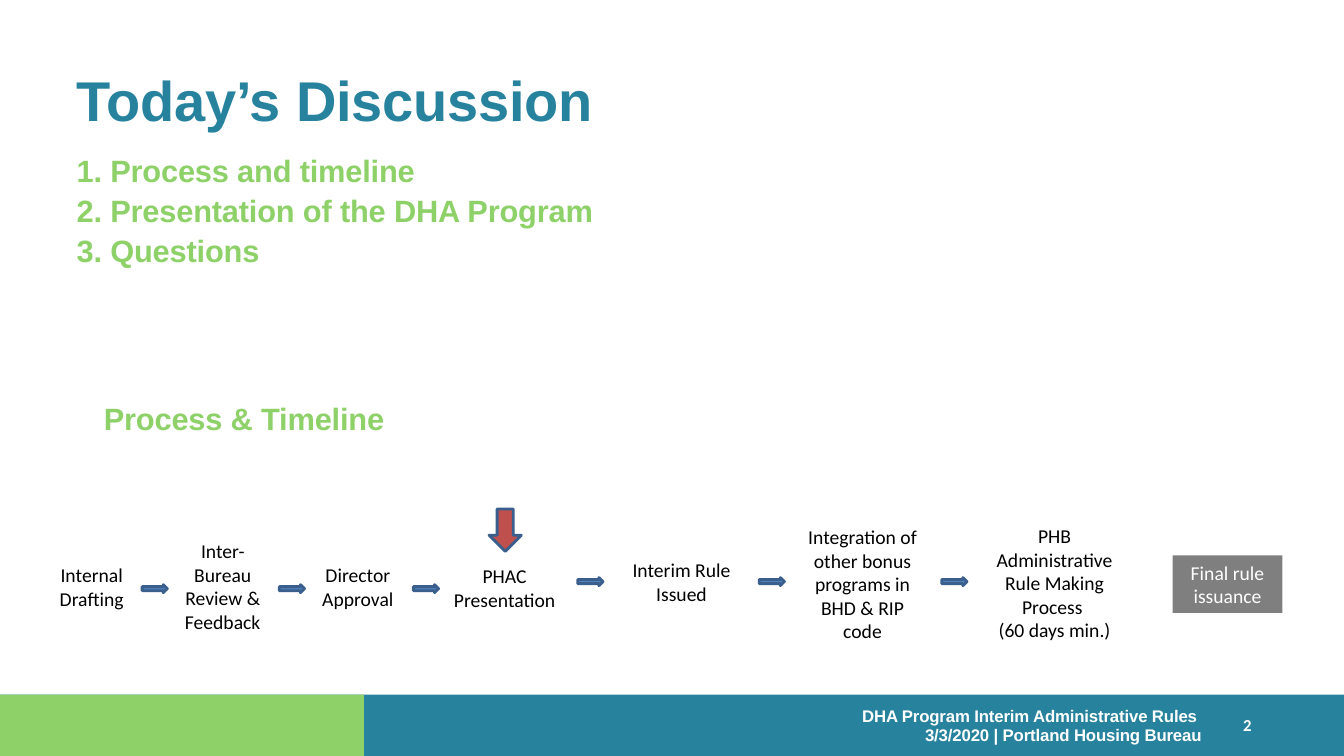
from lxml import etree
from pptx import Presentation
from pptx import util as u
from pptx.dml.color import RGBColor
from pptx.enum import shapes, text
from pptx.oxml.ns import qn

TEAL = RGBColor(0x27, 0x82, 0x9D)
GREEN = RGBColor(0x8F, 0xD1, 0x69)
BLUE = RGBColor(0x4F, 0x81, 0xBD)
OUTLINE = RGBColor(0x3A, 0x5F, 0x8C)
RED = RGBColor(0xC0, 0x50, 0x4D)
BLACK = RGBColor(0, 0, 0)
WHITE = RGBColor(0xFF, 0xFF, 0xFF)

TITLE = {"name": "Arial", "size": u.Pt(40), "bold": True}
HEADING = {"name": "Arial", "size": u.Pt(22), "bold": True}
FOOTER = {"name": "Arial", "size": u.Pt(12), "bold": True}
NUMBER = {"name": "Calibri", "size": u.Pt(12), "bold": True}
STEP = {"name": "Calibri", "size": u.Pt(14), "bold": False}

CENTER, RIGHT = text.PP_ALIGN.CENTER, text.PP_ALIGN.RIGHT
NO_INSET = (0, 0.01, 0, 0)
STEP_INSET = (0.1, 0.05, 0.1, 0.05)

# Process steps: left, top, width, height, lines
STEPS = [
    (0.48, 5.54, 0.86, 0.57, ["Internal Drafting "]),
    (1.63, 5.3, 1.16, 1.04, ["Inter-Bureau Review & Feedback"]),
    (2.91, 5.54, 1.28, 0.57, ["Director Approval"]),
    (4.38, 5.55, 1.25, 0.57, ["PHAC Presentation"]),
    (6.16, 5.49, 1.2, 0.57, ["Interim Rule Issued"]),
    (7.88, 5.16, 1.35, 1.28,
     ["Integration of other bonus programs in BHD & RIP code"]),
    (9.76, 5.15, 1.4, 1.28,
     ["PHB Administrative Rule Making Process ", "(60 days min.)"]),
]
STEP_ARROWS = [(1.41, 5.8), (2.77, 5.8), (4.1, 5.8),
               (5.73, 5.73), (7.53, 5.73), (9.34, 5.73)]


def inches(values):
    return [u.Inches(value) for value in values]


def write(shape, lines, style, color, paragraph_format=None,
          inset=NO_INSET, tracking=None):
    frame = shape.text_frame
    frame.word_wrap = True
    for side, margin in zip(("left", "top", "right", "bottom"), inches(inset)):
        setattr(frame, "margin_" + side, margin)
    for index, line in enumerate(lines):
        paragraph = frame.paragraphs[0] if index == 0 else frame.add_paragraph()
        for name, value in (paragraph_format or {}).items():
            setattr(paragraph, name, value)
        run = paragraph.add_run()
        run.text = line
        for name, value in style.items():
            setattr(run.font, name, value)
        run.font.color.rgb = color
        if tracking is not None:
            run._r.get_or_add_rPr().set("spc", str(tracking))


def add_text(slide, box, lines, style, color, **options):
    write(slide.shapes.add_textbox(*inches(box)), lines, style, color, **options)


def add_block(slide, kind, box, color, outline=None):
    shape = slide.shapes.add_shape(kind, *inches(box))
    shape.shadow.inherit = False
    shape.fill.solid()
    shape.fill.fore_color.rgb = color
    if outline is None:
        shape.line.fill.background()
    else:
        shape.line.color.rgb = outline
        shape.line.width = u.Pt(2)
    return shape


def set_opacity(shape, percent):
    color = shape.fill._xPr.find(qn("a:solidFill"))[0]
    etree.SubElement(color, qn("a:alpha")).set("val", str(percent * 1000))


def main():
    presentation = Presentation()
    presentation.slide_width = u.Inches(13.33)
    presentation.slide_height = u.Inches(7.5)
    slide = presentation.slides.add_slide(presentation.slide_layouts[6])
    rectangle = shapes.MSO_SHAPE.RECTANGLE
    arrow = shapes.MSO_SHAPE.RIGHT_ARROW

    # Footer
    add_block(slide, rectangle, (0, 6.89, 13.33, 0.61), TEAL)
    add_block(slide, rectangle, (0, 6.89, 3.61, 0.61), GREEN)
    add_text(slide, (5.25, 7, 6.67, 0.39),
             ["DHA Program Interim Administrative Rules ",
              "3/3/2020 | Portland Housing Bureau"], FOOTER, WHITE,
             paragraph_format={"alignment": RIGHT, "line_spacing": u.Pt(14.2)},
             inset=(0, 0, 0, 0), tracking=-10)
    add_text(slide, (12.33, 7.08, 0.2, 0.21), ["2"], NUMBER, WHITE)

    # Title, agenda and section heading
    add_text(slide, (0.76, 0.64, 7.5, 0.69), ["Today’s Discussion"],
             TITLE, TEAL, tracking=-10)
    add_text(slide, (0.76, 1.5, 11.52, 1.2),
             ["1. Process and timeline", "2. Presentation of the DHA Program",
              "3. Questions"], HEADING, GREEN,
             paragraph_format={"space_before": u.Pt(2)}, tracking=-10)
    add_text(slide, (1.03, 3.96, 6, 0.4), ["Process & Timeline"],
             HEADING, GREEN, tracking=-10)

    # Process steps and the arrows between them
    centered = {"alignment": CENTER}
    for *box, lines in STEPS:
        add_text(slide, box, lines, STEP, BLACK,
                 paragraph_format=centered, inset=STEP_INSET)
    for left, top in STEP_ARROWS:
        add_block(slide, arrow, (left, top, 0.25, 0.08), BLUE, OUTLINE)

    # Marker for the current step
    marker = add_block(slide, arrow, (4.8, 5.1, 0.42, 0.32), RED, OUTLINE)
    marker.rotation = 90

    # Final step
    final = add_block(slide, rectangle, (11.63, 5.51, 1.09, 0.57), BLACK)
    set_opacity(final, 50)
    write(final, ["Final rule issuance"], STEP, WHITE,
          paragraph_format=centered, inset=STEP_INSET)

    presentation.save("out.pptx")


if __name__ == "__main__":
    main()
